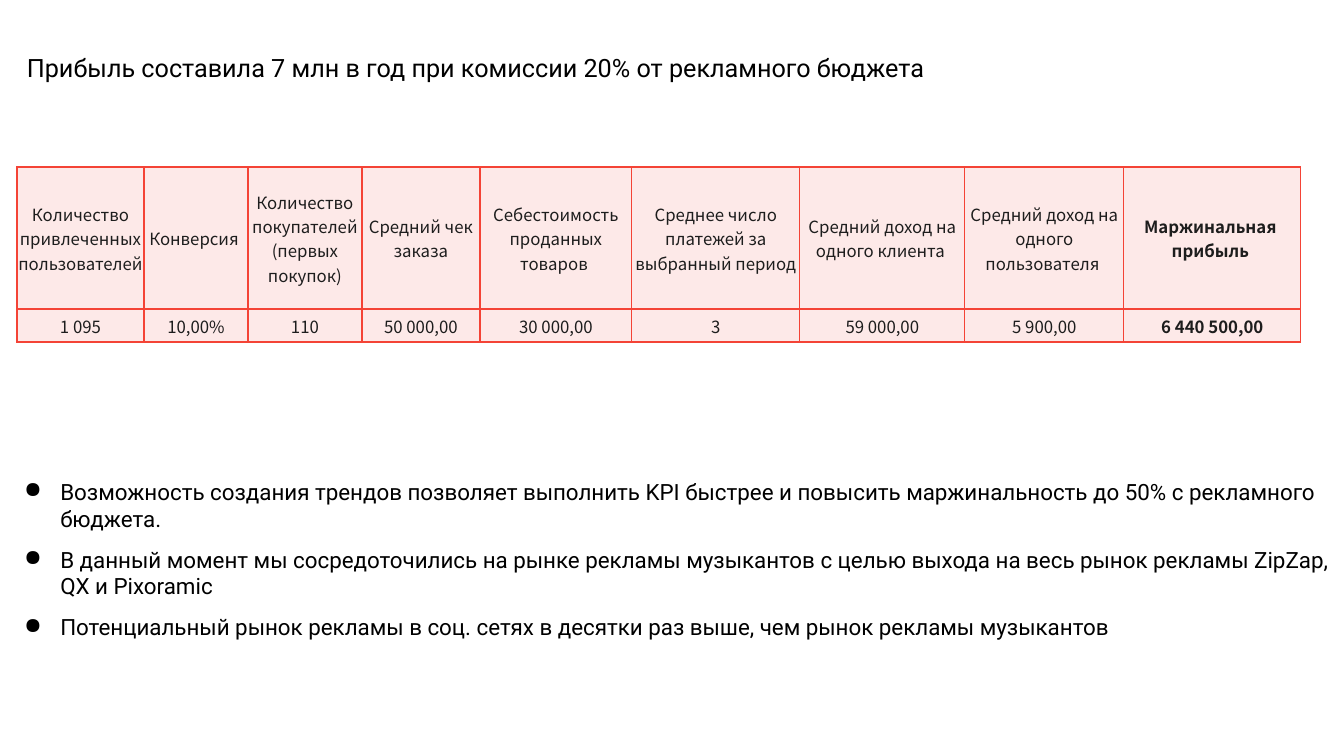
"""Build the yearly profit slide: headline, unit economics table and bullets."""
from lxml import etree
from pptx import Presentation
from pptx import util as u
from pptx.dml.color import RGBColor
from pptx.enum import text
from pptx.oxml import ns

PX = 914400 / 100.8
PINK, RED, INK, BLACK = "FDE9E8", "F44336", "1D1D1D", "000000"
TABLE_FONT, BODY_FONT = "Noto Sans CJK SC", "Roboto"

HEADLINE = "Прибыль составила 7 млн в год при комиссии 20% от рекламного бюджета"
METRICS = [
    (127, "Количество привлеченных пользователей ", "1 095"),
    (104, "Конверсия ", "10,00%"),
    (114, "Количество покупателей (первых покупок)", "110"),
    (118, "Средний чек заказа", "50 000,00"),
    (152, "Себестоимость проданных товаров ", "30 000,00"),
    (168, "Среднее число платежей за выбранный период", "3"),
    (165, "Средний доход на одного клиента ", "59 000,00"),
    (159, "Средний доход на одного пользователя ", "5 900,00"),
    (177, "Маржинальная \nприбыль ", "6 440 500,00"),
]
ROW_HEIGHTS = (142, 33)
POINTS = [
    "Возможность создания трендов позволяет выполнить KPI быстрее и повысить "
    "маржинальность до 50% с рекламного бюджета.",
    "В данный момент мы сосредоточились на рынке рекламы музыкантов с целью "
    "выхода на весь рынок рекламы ZipZap, QX и Pixoramic",
    "Потенциальный рынок рекламы в соц. сетях в десятки раз выше, чем рынок "
    "рекламы музыкантов",
]


def px(length):
    """Turn px into EMU."""
    return u.Emu(round(length * PX))


def colour(code):
    """Turn a hex string into a colour."""
    return RGBColor.from_string(code)


def style(paragraph, face, size, code, bold=False):
    """Set the font of a paragraph."""
    font = paragraph.font
    font.name, font.size, font.bold = face, u.Pt(size), bold
    font.color.rgb = colour(code)


def add_text(slide, left, top, width, height):
    """Add a wrapping text box and return its frame."""
    frame = slide.shapes.add_textbox(px(left), px(top), px(width), px(height)).text_frame
    frame.word_wrap = True
    return frame


def add_headline(slide):
    """Add the headline."""
    frame = add_text(slide, 17, 47, 1284, 40)
    frame.text = HEADLINE
    style(frame.paragraphs[0], BODY_FONT, 18, BLACK)


def add_bullet(paragraph):
    """Give a paragraph a hanging round bullet."""
    props = paragraph._p.get_or_add_pPr()
    props.set("marL", str(u.Inches(0.5)))
    props.set("indent", str(u.Inches(-0.36)))
    mark = etree.SubElement(props, ns.qn("a:buClr"))
    etree.SubElement(mark, ns.qn("a:srgbClr"), val=BLACK)
    etree.SubElement(props, ns.qn("a:buChar"), char="●")


def add_points(slide):
    """Add the bulleted conclusions."""
    frame = add_text(slide, 0, 468, 1344, 184)
    frame.margin_top = frame.margin_bottom = px(10)
    frame.text = "\n".join(POINTS)
    for paragraph in frame.paragraphs:
        paragraph.space_before = u.Pt(10)
        add_bullet(paragraph)
        style(paragraph, BODY_FONT, 16, BLACK)
    frame.paragraphs[-1].space_after = u.Pt(10)


def add_borders(cell):
    """Draw a thin red line on all four sides of a cell."""
    props = cell._tc.get_or_add_tcPr()
    for side in ("lnL", "lnR", "lnT", "lnB"):
        line = etree.SubElement(props, ns.qn(f"a:{side}"), w=str(u.Pt(1)))
        fill = etree.SubElement(line, ns.qn("a:solidFill"))
        etree.SubElement(fill, ns.qn("a:srgbClr"), val=RED)


def fill_cell(cell, words, bold):
    """Write and format one table cell."""
    add_borders(cell)
    cell.fill.solid()
    cell.fill.fore_color.rgb = colour(PINK)
    cell.margin_left = cell.margin_right = cell.margin_top = px(1)
    cell.margin_bottom = 0
    cell.vertical_anchor = text.MSO_ANCHOR.MIDDLE
    cell.text = words
    for paragraph in cell.text_frame.paragraphs:
        paragraph.alignment = text.PP_ALIGN.CENTER
        style(paragraph, TABLE_FONT, 12, INK, bold)


def add_metrics(slide):
    """Add the table of metrics with the profit column in bold."""
    width = sum(metric[0] for metric in METRICS)
    table = slide.shapes.add_table(
        len(ROW_HEIGHTS), len(METRICS), px(17), px(167), px(width), px(sum(ROW_HEIGHTS))
    ).table
    table.first_row = table.horz_banding = False
    for row, height in zip(table.rows, ROW_HEIGHTS):
        row.height = px(height)
    for index, (column_width, *entries) in enumerate(METRICS):
        table.columns[index].width = px(column_width)
        for row, words in enumerate(entries):
            fill_cell(table.cell(row, index), words, index == len(METRICS) - 1)


def main():
    """Build and save the slide."""
    deck = Presentation()
    deck.slide_width, deck.slide_height = px(1344), px(756)
    slide = deck.slides.add_slide(deck.slide_layouts[6])
    add_metrics(slide)
    add_points(slide)
    add_headline(slide)
    deck.save("out.pptx")


if __name__ == "__main__":
    main()
